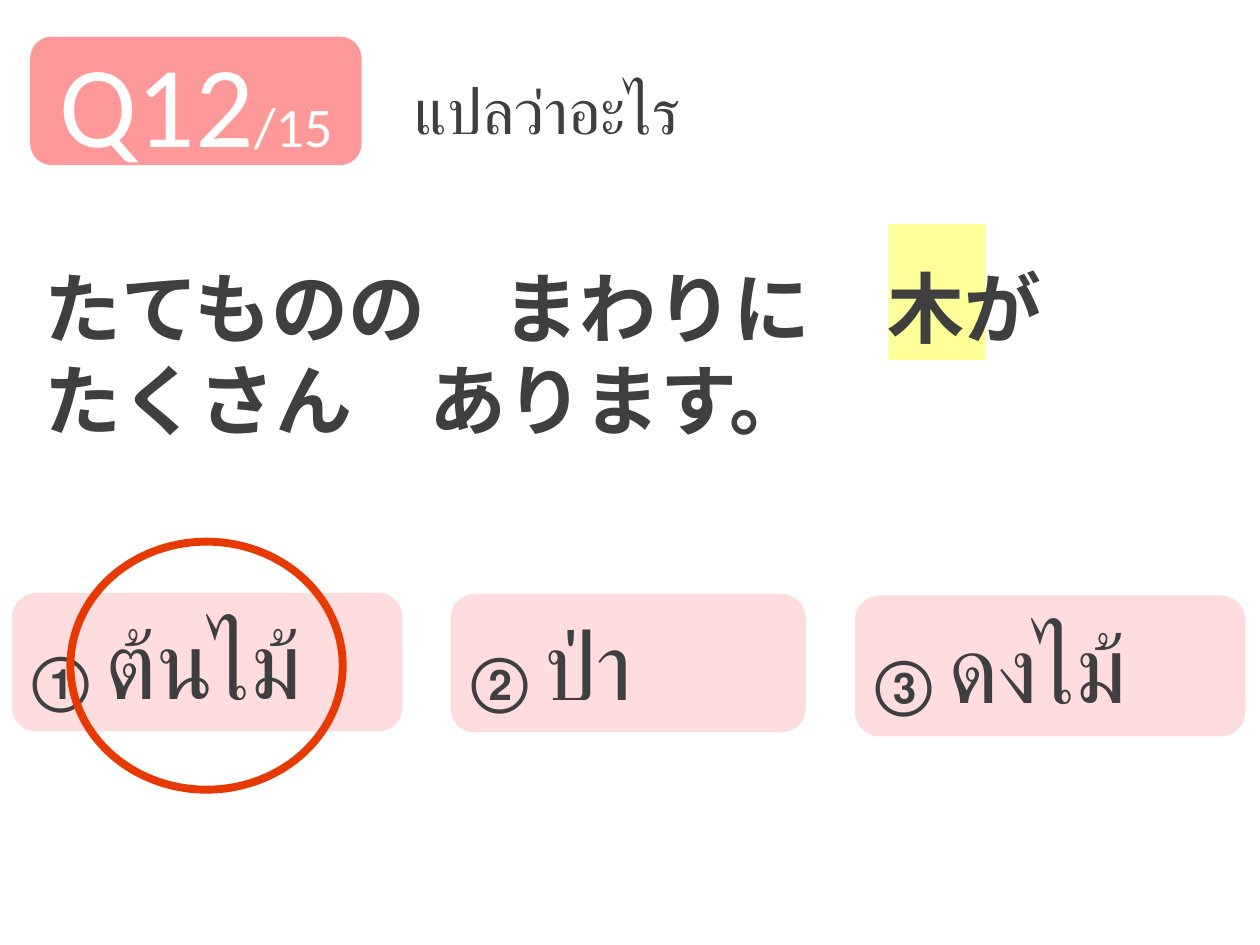
from dataclasses import dataclass

from pptx import Presentation
from pptx.dml.color import RGBColor
from pptx.enum.shapes import MSO_SHAPE as Preset
from pptx.enum.text import MSO_ANCHOR as Anchor, MSO_AUTO_SIZE as AutoSize, PP_ALIGN as Align
from pptx.shapes.autoshape import Shape
from pptx.slide import Slide
from pptx.text.text import _Paragraph as Paragraph
from pptx.util import Cm, Pt

INK = "3F3F3F"
WHITE = "FFFFFF"
BADGE_PINK = "FF9999"
OPTION_PINK = "FFDDDE"
HIGHLIGHT_YELLOW = "FFFF99"
ANSWER_RED = "E73903"


@dataclass(frozen=True)
class Box:
    left: float
    top: float
    width: float
    height: float

    def lengths(self) -> tuple[Cm, Cm, Cm, Cm]:
        return Cm(self.left), Cm(self.top), Cm(self.width), Cm(self.height)


@dataclass(frozen=True)
class TextStyle:
    size: float
    color: str = INK
    font: str = "Roboto"
    bold: bool = False


@dataclass(frozen=True)
class Option:
    number: str
    word: str
    box: Box


OPTIONS = [
    Option("①", "ต้นไม้", Box(0.28, 11.99, 7.8, 2.72)),
    Option("②", "ป่า", Box(9.12, 12.01, 7.09, 2.72)),
    Option("③", "ดงไม้", Box(17.27, 12.04, 7.8, 2.77)),
]
SENTENCE = ["たてものの　まわりに　木が", "たくさん　あります。"]


def rgb(color: str) -> RGBColor:
    return RGBColor.from_string(color)


def add_run(paragraph: Paragraph, text: str, style: TextStyle) -> None:
    run = paragraph.add_run()
    run.text = text
    run.font.name = style.font
    run.font.size = Pt(style.size)
    run.font.bold = style.bold
    run.font.color.rgb = rgb(style.color)


def add_preset(slide: Slide, preset: Preset, box: Box, fill: str | None = None,
               line: str | None = None, line_width: float = 2) -> Shape:
    shape = slide.shapes.add_shape(preset, *box.lengths())
    shape.shadow.inherit = False
    if fill:
        shape.fill.solid()
        shape.fill.fore_color.rgb = rgb(fill)
    else:
        shape.fill.background()
    if line:
        shape.line.color.rgb = rgb(line)
        shape.line.width = Pt(line_width)
    else:
        shape.line.fill.background()
    return shape


def add_badge(slide: Slide) -> None:
    badge = add_preset(slide, Preset.ROUNDED_RECTANGLE, Box(0.61, 0.74, 6.68, 2.59), BADGE_PINK)
    badge.text_frame.vertical_anchor = Anchor.MIDDLE
    paragraph = badge.text_frame.paragraphs[0]
    paragraph.alignment = Align.CENTER
    add_run(paragraph, "Q12", TextStyle(66, WHITE, "Calibri"))
    add_run(paragraph, "/15", TextStyle(32, WHITE, "Calibri"))


def add_option(slide: Slide, option: Option) -> None:
    shape = add_preset(slide, Preset.ROUNDED_RECTANGLE, option.box, OPTION_PINK, OPTION_PINK)
    shape.text_frame.vertical_anchor = Anchor.MIDDLE
    paragraph = shape.text_frame.paragraphs[0]
    paragraph.alignment = Align.LEFT
    add_run(paragraph, f"{option.number} ", TextStyle(32, bold=True))
    add_run(paragraph, option.word, TextStyle(54))


def add_sentence(slide: Slide) -> None:
    text_box = slide.shapes.add_textbox(*Box(0.64, 5.13, 24.05, 4.01).lengths())
    text_frame = text_box.text_frame
    text_frame.word_wrap = True
    text_frame.auto_size = AutoSize.SHAPE_TO_FIT_TEXT
    for index, text in enumerate(SENTENCE):
        paragraph = text_frame.add_paragraph() if index else text_frame.paragraphs[0]
        add_run(paragraph, text, TextStyle(44, bold=True))


def set_title(slide: Slide) -> None:
    title = slide.shapes.title
    title.left, title.top, title.width, title.height = Box(8.1, 1.32, 17.4, 1.8).lengths()
    title.text_frame.vertical_anchor = Anchor.TOP
    title.text_frame.auto_size = AutoSize.SHAPE_TO_FIT_TEXT
    paragraph = title.text_frame.paragraphs[0]
    paragraph.alignment = Align.LEFT
    add_run(paragraph, "แปลว่าอะไร", TextStyle(36))


def main() -> None:
    presentation = Presentation()
    presentation.slide_width = Cm(25.4)
    presentation.slide_height = Cm(19.05)
    slide = presentation.slides.add_slide(presentation.slide_layouts.get_by_name("Title Only"))

    set_title(slide)
    add_preset(slide, Preset.RECTANGLE, Box(17.91, 4.52, 1.96, 2.74), HIGHLIGHT_YELLOW)
    add_badge(slide)
    for option in OPTIONS:
        add_option(slide, option)
    add_sentence(slide)
    add_preset(slide, Preset.OVAL, Box(1.42, 10.92, 5.49, 5), line=ANSWER_RED, line_width=4.5)

    presentation.save("out.pptx")


if __name__ == "__main__":
    main()
